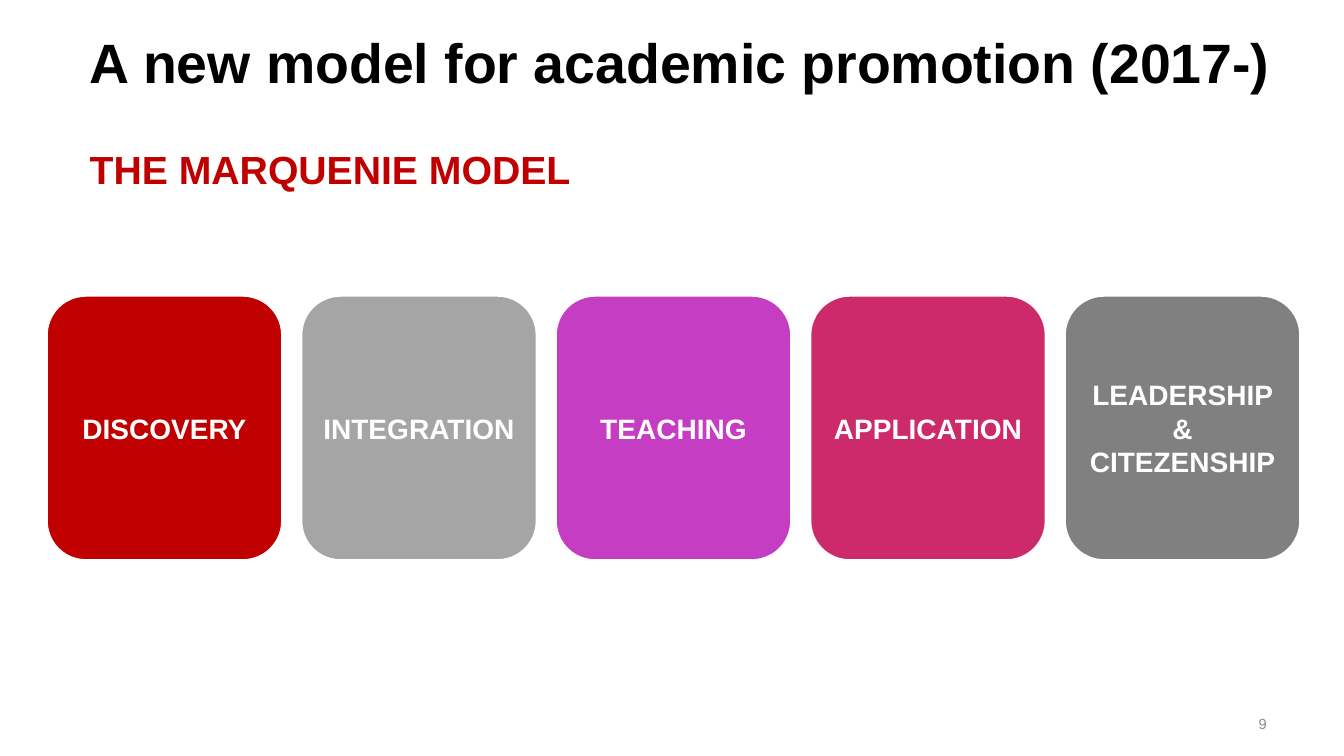
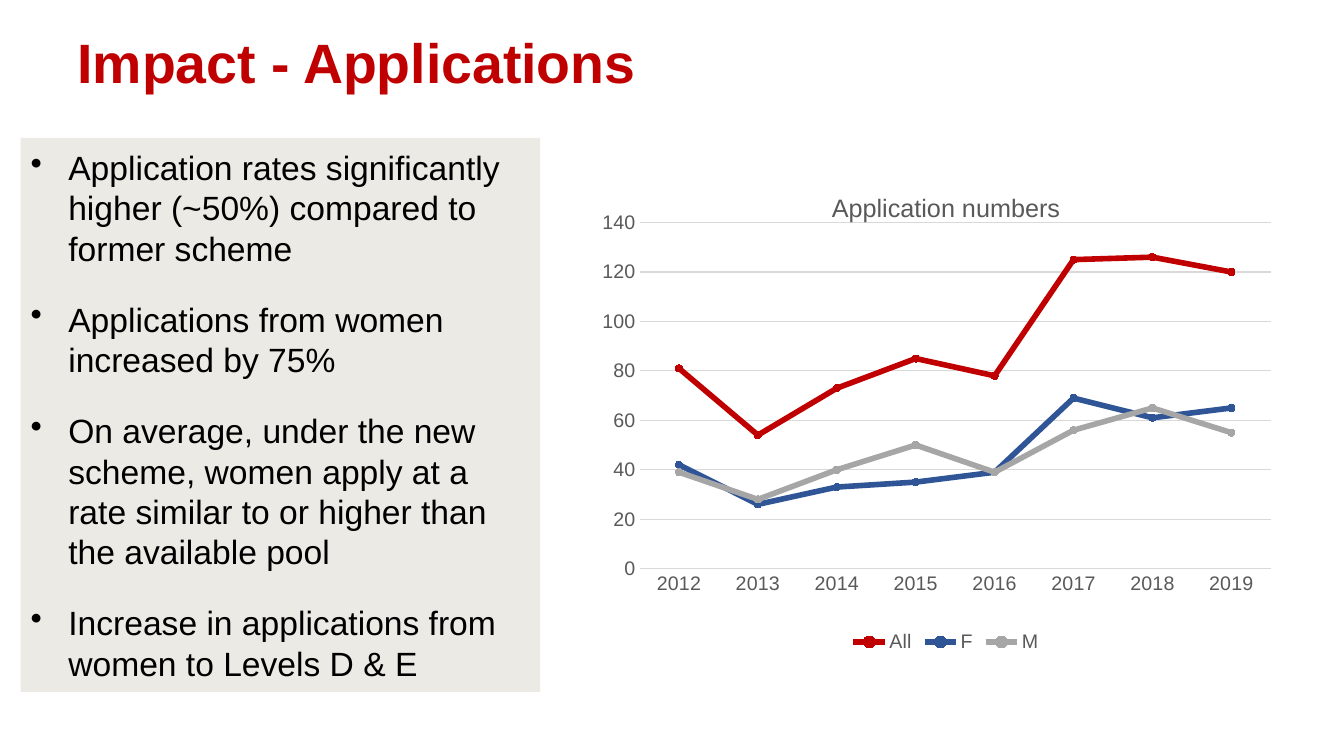
import pptx
import pptx.util
import pptx.chart.data
import pptx.dml.color
import pptx.enum.chart
import pptx.enum.shapes
import pptx.enum.text
import pptx.oxml

Pt = pptx.util.Pt
Shape = pptx.enum.shapes.MSO_SHAPE
Align = pptx.enum.text.PP_ALIGN
Anchor = pptx.enum.text.MSO_ANCHOR
Chart = pptx.enum.chart

# Content
FONT = "Arial"
COLORS = {
    "black": "000000", "white": "FFFFFF", "red": "C00000", "silver": "A5A5A5",
    "violet": "C43DC2", "pink": "CC2A6A", "gray": "808080", "sand": "ECEAE4",
    "label": "595959", "grid": "D9D9D9", "number": "8C8C8C",
    "blue": "2F5597", "ash": "A6A6A6",
}
CARDS = [
    ("DISCOVERY", "red"),
    ("INTEGRATION", "silver"),
    ("TEACHING", "violet"),
    ("APPLICATION", "pink"),
    ("LEADERSHIP & CITEZENSHIP", "gray"),
]
POINTS = [
    "Application rates significantly higher (~50%) compared to former scheme",
    "Applications from women increased by 75%",
    "On average, under the new scheme, women apply at a rate similar to or "
    "higher than the available pool",
    "Increase in applications from women to Levels D & E",
]
YEARS = [str(year) for year in range(2012, 2020)]
SERIES = [
    ("All", "red", (81, 54, 73, 85, 78, 125, 126, 120)),
    ("F", "blue", (42, 26, 33, 35, 39, 69, 61, 65)),
    ("M", "ash", (39, 28, 40, 50, 39, 56, 65, 55)),
]
PLOT = {"x": 0.07, "y": 0.104, "w": 0.886, "h": 0.714}


# Shared helpers
def color(name):
    return pptx.dml.color.RGBColor.from_string(COLORS[name])


def paint(target, name):
    target.solid()
    target.fore_color.rgb = color(name)


def style(font, size, name, bold=False):
    font.name, font.size, font.bold = FONT, Pt(size), bold
    font.color.rgb = color(name)


def write(frame, text, size=24, ink="black", bold=False, align=Align.LEFT,
          anchor=Anchor.MIDDLE, line=None, before=0, after=0, bullet=0):
    """Fill a text frame; a list of texts gives one paragraph each."""
    frame.word_wrap = True
    frame.vertical_anchor = anchor
    for i, words in enumerate([text] if isinstance(text, str) else text):
        para = frame.add_paragraph() if i else frame.paragraphs[0]
        para.alignment = align
        para.line_spacing = line
        para.space_before, para.space_after = Pt(before), Pt(after)
        run = para.add_run()
        run.text = words
        style(run.font, size, ink, bold)
        if bullet:
            props = para._p.get_or_add_pPr()
            props.set("marL", str(Pt(bullet)))
            props.set("indent", str(-Pt(bullet)))
            mark = pptx.oxml.parse_xml(
                '<a:buChar xmlns:a="http://schemas.openxmlformats.org/'
                'drawingml/2006/main" char="•"/>')
            props.append(mark)


def label(slide, text, box, **form):
    area = slide.shapes.add_textbox(*map(Pt, box))
    write(area.text_frame, text, **form)


def block(slide, kind, box, fill, edge=None):
    shape = slide.shapes.add_shape(kind, *map(Pt, box))
    shape.shadow.inherit = False
    paint(shape.fill, fill)
    if edge:
        paint(shape.line.fill, edge)
        shape.line.width = Pt(1.5)
    else:
        shape.line.fill.background()
    return shape


def title(slide, text, left, width, ink):
    label(slide, text, (left, 21.6, width, 50.8), size=39.6, ink=ink,
          bold=True, line=0.9)


# Slide with the row of cards
def model(slide):
    title(slide, "A new model for academic promotion (2017-)", 57, 888, "black")
    label(slide, "THE MARQUENIE MODEL", (57, 103.7, 672, 37.4), size=28,
          ink="red", bold=True, line=0.9, anchor=Anchor.TOP)
    left, top, width, height, step = 33.4, 211.2, 168.2, 189, 181.8
    for i, (text, fill) in enumerate(CARDS):
        card = block(slide, Shape.ROUNDED_RECTANGLE,
                     (left + i * step, top, width, height), fill, "white")
        write(card.text_frame, text, size=20, ink="white", bold=True,
              align=Align.CENTER)
    label(slide, "9", (688, 502.5, 224, 28.8), size=10.5, ink="number",
          align=Align.RIGHT)


# Line chart
def trend(slide, box):
    data = pptx.chart.data.CategoryChartData()
    data.categories = YEARS
    for name, _, values in SERIES:
        data.add_series(name, values)
    chart = slide.shapes.add_chart(
        Chart.XL_CHART_TYPE.LINE_MARKERS, *map(Pt, box), data).chart
    style(chart.font, 14, "label")

    chart.has_title = True
    head = chart.chart_title.text_frame
    head.text = "Application numbers"
    style(head.paragraphs[0].runs[0].font, 18, "label")
    chart.chart_title.include_in_layout = False

    chart.has_legend = True
    chart.legend.position = Chart.XL_LEGEND_POSITION.BOTTOM
    chart.legend.include_in_layout = False
    style(chart.legend.font, 14, "label")

    years, count = chart.category_axis, chart.value_axis
    for axis in (years, count):
        axis.major_tick_mark = Chart.XL_TICK_MARK.NONE
        style(axis.tick_labels.font, 14, "label")
    count.minimum_scale, count.maximum_scale, count.major_unit = 0, 140, 20
    count.format.line.fill.background()
    for line in (years.format.line, count.major_gridlines.format.line):
        paint(line.fill, "grid")
        line.width = Pt(0.75)

    chart.plots[0].vary_by_categories = False
    for series, (_, ink, _) in zip(chart.plots[0].series, SERIES):
        series.smooth = False
        paint(series.format.line.fill, ink)
        series.format.line.width = Pt(4)
        series.marker.style = Chart.XL_MARKER_STYLE.CIRCLE
        series.marker.size = 5
        paint(series.marker.format.fill, ink)
        paint(series.marker.format.line.fill, ink)

    # Fixed inner plot area
    area = chart._chartSpace.chart.plotArea
    for old in area.findall(pptx.oxml.ns.qn("c:layout")):
        area.remove(old)
    sizes = "".join(f'<c:{key} val="{val}"/>' for key, val in PLOT.items())
    area.insert(0, pptx.oxml.parse_xml(
        '<c:layout xmlns:c="http://schemas.openxmlformats.org/drawingml/'
        '2006/chart"><c:manualLayout><c:layoutTarget val="inner"/>'
        '<c:xMode val="edge"/><c:yMode val="edge"/>'
        f'{sizes}</c:manualLayout></c:layout>'))


# Slide with the findings and the chart
def impact(slide):
    panel = block(slide, Shape.RECTANGLE, (14.7, 98.5, 371.2, 395.8), "sand")
    write(panel.text_frame, POINTS, before=10, after=12, bullet=27)
    trend(slide, (421.2, 123, 509, 346.3))
    title(slide, "Impact - Applications", 48.2, 672, "red")


def main():
    deck = pptx.Presentation()
    deck.slide_width, deck.slide_height = Pt(960), Pt(540)
    for build in (model, impact):
        build(deck.slides.add_slide(deck.slide_layouts[6]))
    deck.save("out.pptx")


if __name__ == "__main__":
    main()
